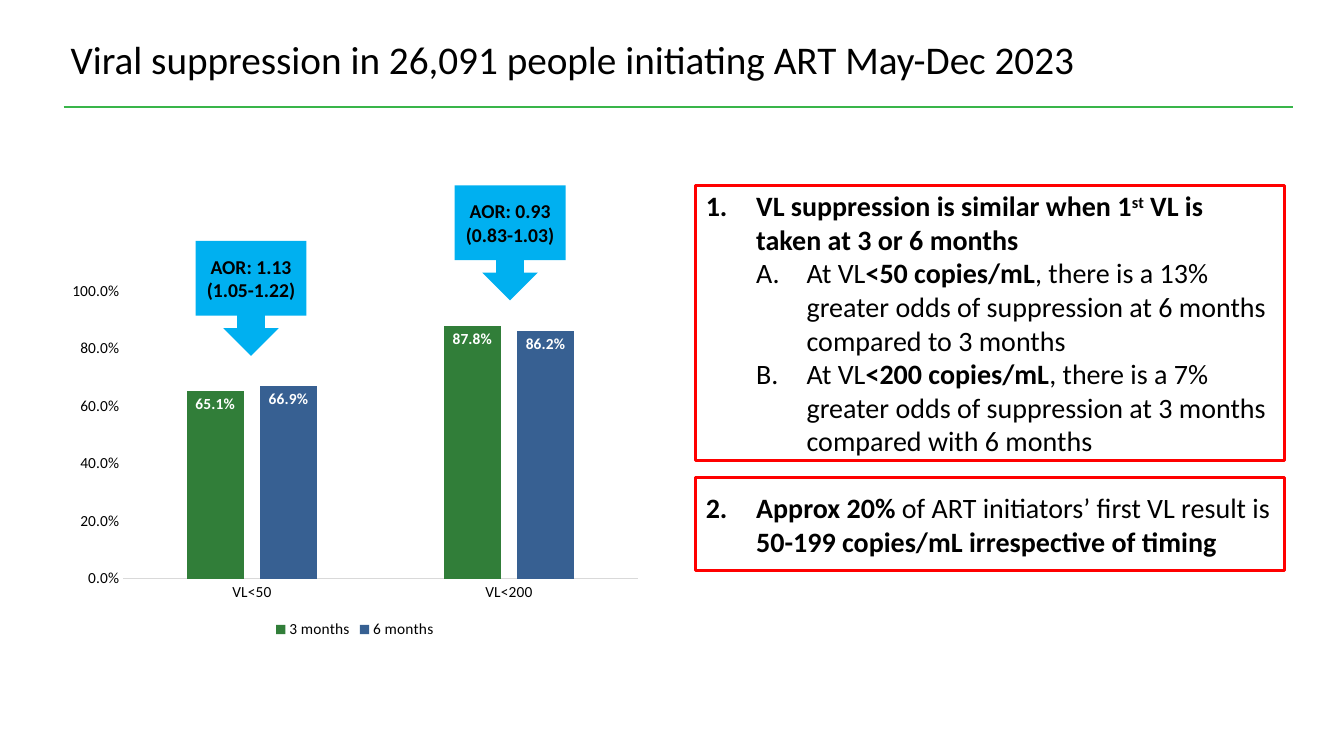
from lxml import etree
from pptx import Presentation
from pptx.chart.data import CategoryChartData
from pptx.dml.color import RGBColor
from pptx.enum.chart import XL_CHART_TYPE as ChartType
from pptx.enum.chart import XL_LABEL_POSITION as LabelPosition
from pptx.enum.chart import XL_LEGEND_POSITION as LegendPosition
from pptx.enum.chart import XL_TICK_MARK as TickMark
from pptx.enum.shapes import MSO_CONNECTOR as Connector
from pptx.enum.shapes import MSO_SHAPE as Shape
from pptx.enum.text import MSO_ANCHOR as Anchor
from pptx.enum.text import MSO_AUTO_SIZE as AutoSize
from pptx.enum.text import PP_ALIGN as Align
from pptx.oxml.ns import qn
from pptx.util import Inches, Pt

BLACK = RGBColor(0x00, 0x00, 0x00)
WHITE = RGBColor(0xFF, 0xFF, 0xFF)
GREY = RGBColor(0xD9, 0xD9, 0xD9)
RED = RGBColor(0xFF, 0x00, 0x00)
RULE_GREEN = RGBColor(0x39, 0xB5, 0x4A)
BAR_GREEN = RGBColor(0x31, 0x7E, 0x39)
BAR_BLUE = RGBColor(0x37, 0x60, 0x92)
SKY_BLUE = RGBColor(0x00, 0xB0, 0xF0)

FONT = "Calibri"
PERCENT = "0.0%"
SERIES = [
    ("3 months", (0.651, 0.878), BAR_GREEN),
    ("6 months", (0.669, 0.862), BAR_BLUE),
]
CALLOUTS = [
    (1.94, 2.39, "AOR: 1.13 (1.05-1.22)"),
    (4.51, 1.84, "AOR: 0.93 (0.83-1.03)"),
]
# Each list item: level, number scheme, first number, (text, style) spans
SUPPRESSION = [
    (0, "arabicPeriod", 1, [("VL suppression is similar when 1", "bold"), ("st", "super"),
                            (" VL is taken at 3 or 6 months", "bold")]),
    (1, "alphaUcPeriod", 1, [("At VL", ""), ("<50 copies/mL", "bold"),
                             (", there is a 13% greater odds of suppression at 6 months "
                              "compared to 3 months", "")]),
    (1, "alphaUcPeriod", 1, [("At VL", ""), ("<200 copies/mL", "bold"),
                             (", there is a 7% greater odds of suppression at 3 months "
                              "compared with 6 months", "")]),
]
FIRST_RESULT = [
    (0, "arabicPeriod", 2, [("Approx 20% ", "bold"),
                            ("of ART initiators’ first VL result is ", ""),
                            ("50-199 copies/mL irrespective of timing", "bold")]),
]


def set_all(target, values):
    for name, value in values.items():
        setattr(target, name, value)


def set_font(font, size, color=BLACK, bold=False):
    set_all(font, {"name": FONT, "size": Pt(size), "bold": bold})
    font.color.rgb = color


def place(shape, left, top, width, height):
    set_all(shape, {"left": Inches(left), "top": Inches(top),
                    "width": Inches(width), "height": Inches(height)})


def fill_title(title, text):
    place(title, 0.6, 0.29, 12.14, 0.59)
    set_all(title.text_frame, {"text": text, "word_wrap": True,
                               "auto_size": AutoSize.NONE,
                               "vertical_anchor": Anchor.MIDDLE})
    para = title.text_frame.paragraphs[0]
    para.alignment = Align.LEFT
    set_font(para.runs[0].font, 28)


def add_rule(page):
    rule = page.shapes.add_connector(Connector.STRAIGHT, Inches(0.63), Inches(1.06),
                                     Inches(12.82), Inches(1.06))
    rule.line.color.rgb = RULE_GREEN
    rule.line.width = Pt(1.5)
    etree.SubElement(rule._element.spPr, qn("a:effectLst"))


def add_suppression_chart(page):
    data = CategoryChartData(number_format=PERCENT)
    data.categories = ["VL<50", "VL<200"]
    for name, values, _ in SERIES:
        data.add_series(name, values)
    chart = page.shapes.add_chart(ChartType.COLUMN_CLUSTERED, Inches(0.6), Inches(2.72),
                                  Inches(5.84), Inches(3.66), data).chart
    set_font(chart.font, 11)
    set_all(chart, {"has_title": False, "has_legend": True})
    set_all(chart.legend, {"position": LegendPosition.BOTTOM, "include_in_layout": False})
    set_font(chart.legend.font, 11)

    for axis in (chart.category_axis, chart.value_axis):
        set_all(axis, {"major_tick_mark": TickMark.NONE, "minor_tick_mark": TickMark.NONE,
                       "has_major_gridlines": False})
        set_font(axis.tick_labels.font, 11)
    chart.category_axis.format.line.color.rgb = GREY
    chart.category_axis.format.line.width = Pt(0.75)
    chart.value_axis.format.line.fill.background()
    set_all(chart.value_axis, {"minimum_scale": 0, "maximum_scale": 1, "major_unit": 0.2})
    set_all(chart.value_axis.tick_labels,
            {"number_format": PERCENT, "number_format_is_linked": False})

    plot = chart.plots[0]
    set_all(plot, {"gap_width": 219, "overlap": -27, "vary_by_categories": False})
    for series, (_, _, color) in zip(plot.series, SERIES):
        series.format.fill.solid()
        series.format.fill.fore_color.rgb = color
        labels = series.data_labels
        set_all(labels, {"show_value": True, "position": LabelPosition.INSIDE_END,
                         "number_format": PERCENT, "number_format_is_linked": False})
        set_font(labels.font, 11, WHITE, True)


def add_callout(page, left, top, text):
    callout = page.shapes.add_shape(Shape.DOWN_ARROW_CALLOUT, Inches(left), Inches(top),
                                    Inches(1.1), Inches(1.14))
    callout.shadow.inherit = False
    callout.fill.solid()
    callout.fill.fore_color.rgb = SKY_BLUE
    callout.line.fill.background()
    set_all(callout.text_frame, {"text": text, "word_wrap": True,
                                 "vertical_anchor": Anchor.MIDDLE})
    para = callout.text_frame.paragraphs[0]
    para.alignment = Align.CENTER
    set_font(para.runs[0].font, 14, bold=True)


def number_paragraph(para, level, scheme, start):
    para.level = level
    properties = para._p.get_or_add_pPr()
    properties.set("marL", str(Inches(0.5 * (level + 1))))
    properties.set("indent", str(Inches(-0.5)))
    etree.SubElement(properties, qn("a:buFont"), typeface="+mj-lt")
    number = etree.SubElement(properties, qn("a:buAutoNum"), type=scheme)
    if start > 1:
        number.set("startAt", str(start))
    set_all(para, {"space_before": Pt(0), "line_spacing": 1.0, "alignment": Align.LEFT})


def fill_list_box(box, top, height, items):
    place(box, 6.9, top, 5.84, height)
    box.fill.solid()
    box.fill.fore_color.rgb = WHITE
    box.line.color.rgb = RED
    box.line.width = Pt(2)
    frame = box.text_frame
    set_all(frame, {"word_wrap": True, "auto_size": AutoSize.NONE,
                    "vertical_anchor": Anchor.MIDDLE})
    for index, (level, scheme, start, spans) in enumerate(items):
        para = frame.add_paragraph() if index else frame.paragraphs[0]
        number_paragraph(para, level, scheme, start)
        for text, style in spans:
            span = para.add_run()
            span.text = text
            set_font(span.font, 20, bold=bool(style))
            if style == "super":
                span._r.get_or_add_rPr().set("baseline", "30000")


def main():
    deck = Presentation()
    deck.slide_width, deck.slide_height = Inches(13.33), Inches(7.5)
    two_content = deck.slide_layouts[3]
    page = deck.slides.add_slide(two_content)
    title, upper_box, lower_box = page.placeholders
    fill_title(title, "Viral suppression in 26,091 people initiating ART May-Dec 2023")
    add_rule(page)
    add_suppression_chart(page)
    for left, top, text in CALLOUTS:
        add_callout(page, left, top, text)
    fill_list_box(upper_box, 1.84, 2.73, SUPPRESSION)
    fill_list_box(lower_box, 4.74, 0.92, FIRST_RESULT)
    deck.save("out.pptx")


if __name__ == "__main__":
    main()
